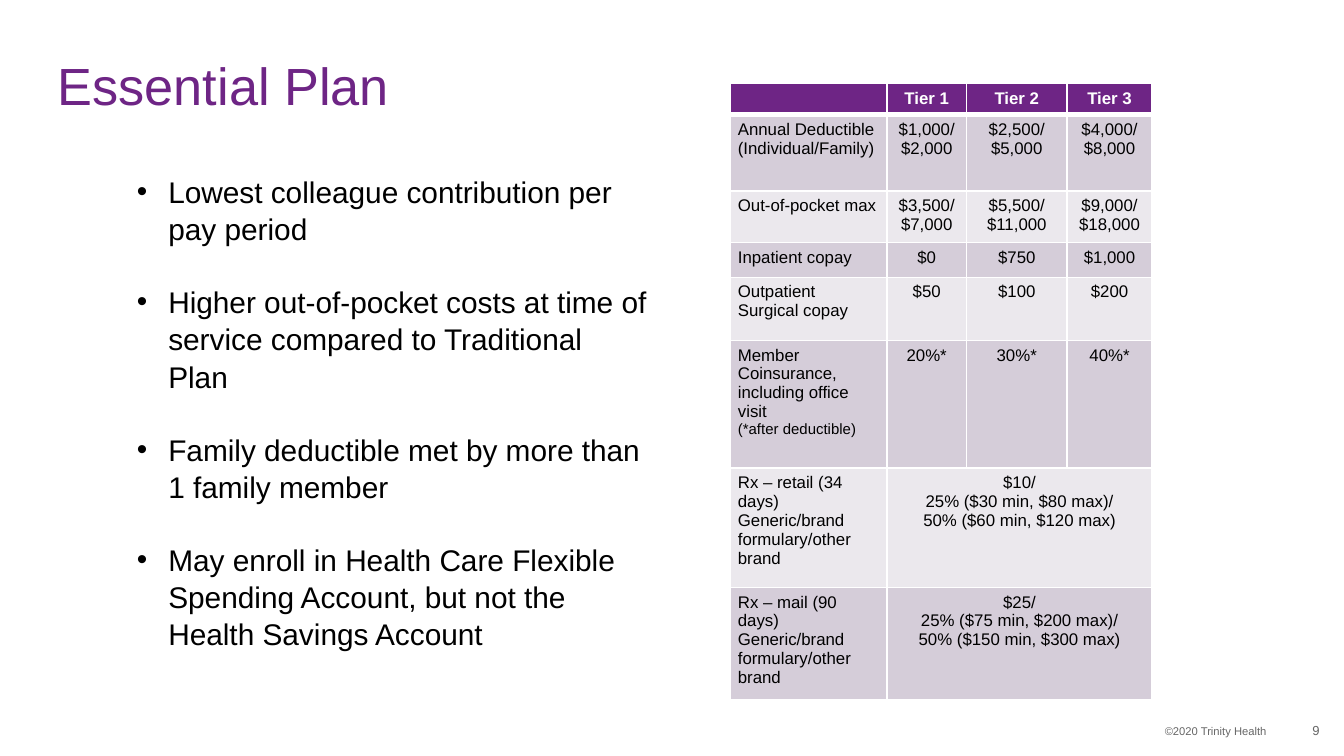
import pptx
import pptx.dml.color
import pptx.enum.text
import pptx.oxml
import pptx.oxml.ns
import pptx.util

Pt = pptx.util.Pt
Align = pptx.enum.text.PP_ALIGN
Anchor = pptx.enum.text.MSO_ANCHOR

PURPLE, WHITE, BLACK, GREY = "6E2585", "FFFFFF", "000000", "666666"
BANDS = ("D5CDD9", "EBE8ED")

POINTS = [
    "Lowest colleague contribution per pay period",
    "Higher out-of-pocket costs at time of service compared to Traditional Plan",
    "Family deductible met by more than 1 family member",
    "May enroll in Health Care Flexible Spending Account, but not the "
    "Health Savings Account",
]
COLS = [84.2, 42.5, 54, 45.4]
# Height, then the cells; a row with one value spans all tiers.
ROWS = [
    (16.5, ["", "Tier 1", "Tier 2", "Tier 3"]),
    (41, ["Annual Deductible (Individual/Family)", "$1,000/\n$2,000",
          "$2,500/ $5,000", "$4,000/ $8,000"]),
    (27.2, ["Out-of-pocket max", "$3,500/ $7,000", "$5,500/ $11,000",
            "$9,000/ $18,000"]),
    (18.7, ["Inpatient copay", "$0", "$750", "$1,000"]),
    (33.8, ["Outpatient Surgical copay", "$50", "$100", "$200"]),
    (68.4, ["Member Coinsurance, including office visit\n(*after deductible)",
            "20%*", "30%*", "40%*"]),
    (64, ["Rx – retail (34 days)\nGeneric/brand formulary/other brand",
          "$10/\n25% ($30 min, $80 max)/\n50% ($60 min, $120 max)"]),
    (59, ["Rx – mail (90 days)\nGeneric/brand formulary/other brand",
          "$25/\n25% ($75 min, $200 max)/\n50% ($150 min, $300 max)"]),
]


def tint(hue):
    return pptx.dml.color.RGBColor.from_string(hue)


def style(para, size, hue, align=Align.LEFT, bold=False):
    para.alignment = align
    font = para.font
    font.name, font.size, font.bold = "Arial", Pt(size), bold
    font.color.rgb = tint(hue)


def add_text(slide, box, text):
    frame = slide.shapes.add_textbox(*map(Pt, box)).text_frame
    frame.word_wrap = True
    frame.text = text
    return frame


def add_title(slide, box, text):
    title = slide.shapes.title
    title.left, title.top, title.width, title.height = map(Pt, box)
    frame = title.text_frame
    frame.text = text
    frame.vertical_anchor = Anchor.MIDDLE
    frame.margin_left = frame.margin_right = 0
    frame.margin_top = frame.margin_bottom = 0
    para = frame.paragraphs[0]
    para.line_spacing = 0.9
    style(para, 28, PURPLE)


def add_points(slide, box, points):
    frame = add_text(slide, box, "\n".join(points))
    for i, para in enumerate(frame.paragraphs):
        props = para._p.get_or_add_pPr()
        props.set("marL", str(Pt(16.9)))
        props.set("indent", str(-Pt(16.9)))
        para.line_spacing = 1.04
        para.space_before = Pt(19.2 if i else 0)
        for tag, key, value in (("buFont", "typeface", "Arial"),
                                ("buChar", "char", "•")):
            bullet = pptx.oxml.parse_xml(
                f'<a:{tag} {pptx.oxml.ns.nsdecls("a")} {key}="{value}"/>')
            props.append(bullet)
        style(para, 16, BLACK)


def add_edges(cell, head, below):
    """Rule the cell in white, thicker along the foot of the header."""
    for side in "LRTB":
        thick = (head and side == "B") or (below and side == "T")
        edge = pptx.oxml.parse_xml(
            f'<a:ln{side} {pptx.oxml.ns.nsdecls("a")} w="{Pt(3 if thick else 1)}">'
            f'<a:solidFill><a:srgbClr val="{WHITE}"/></a:solidFill></a:ln{side}>')
        cell._tc.get_or_add_tcPr().append(edge)


def fill_cell(cell, text, row, col):
    head = row == 0
    cell.margin_left = cell.margin_right = Pt(4.3)
    cell.margin_top = cell.margin_bottom = Pt(2.9)
    cell.vertical_anchor = Anchor.MIDDLE if head else Anchor.TOP
    add_edges(cell, head, row == 1)
    cell.fill.solid()
    cell.fill.fore_color.rgb = tint(PURPLE if head else BANDS[(row - 1) % 2])
    cell.text_frame.text = text
    for para in cell.text_frame.paragraphs:
        size = 8 if para.text.startswith("(*") else 9
        style(para, size, WHITE if head else BLACK,
              Align.CENTER if col else Align.LEFT, head)
        if not para.text:
            para._p.get_or_add_endParaRPr().set("sz", str(size * 100))


def add_tiers(slide, box, cols, rows):
    table = slide.shapes.add_table(len(rows), len(cols), *map(Pt, box)).table
    for col, width in zip(table.columns, cols):
        col.width = Pt(width)
    for r, (height, texts) in enumerate(rows):
        table.rows[r].height = Pt(height)
        for c in range(len(cols)):
            fill_cell(table.cell(r, c), texts[c] if c < len(texts) else "", r, c)
        if len(texts) < len(cols):
            table.cell(r, 1).merge(table.cell(r, len(cols) - 1))


def add_footer(slide, box, number):
    left, top, width, height = box
    note = add_text(slide, (left, top + 4.3, 301.7, 14.4), "©2020 Trinity Health")
    style(note.paragraphs[0], 6, GREY, Align.RIGHT)
    page = add_text(slide, (left + width - 31.7, top, 31.7, height), number)
    page.margin_right = 0
    page.vertical_anchor = Anchor.MIDDLE
    style(page.paragraphs[0], 7, GREY, Align.RIGHT)


def main():
    deck = pptx.Presentation()
    deck.slide_width, deck.slide_height = Pt(720), Pt(405)
    slide = deck.slides.add_slide(deck.slide_layouts.get_by_name("Title Only"))
    add_title(slide, (31, 27.4, 648, 39.6), "Essential Plan")
    add_points(slide, (66.2, 88.6, 288.7, 259.2), POINTS)
    add_tiers(slide, (391, 44.8, 226.1, 328.6), COLS, ROWS)
    add_footer(slide, (383.8, 380.2, 323.2, 21.6), "9")
    deck.save("out.pptx")


if __name__ == "__main__":
    main()
